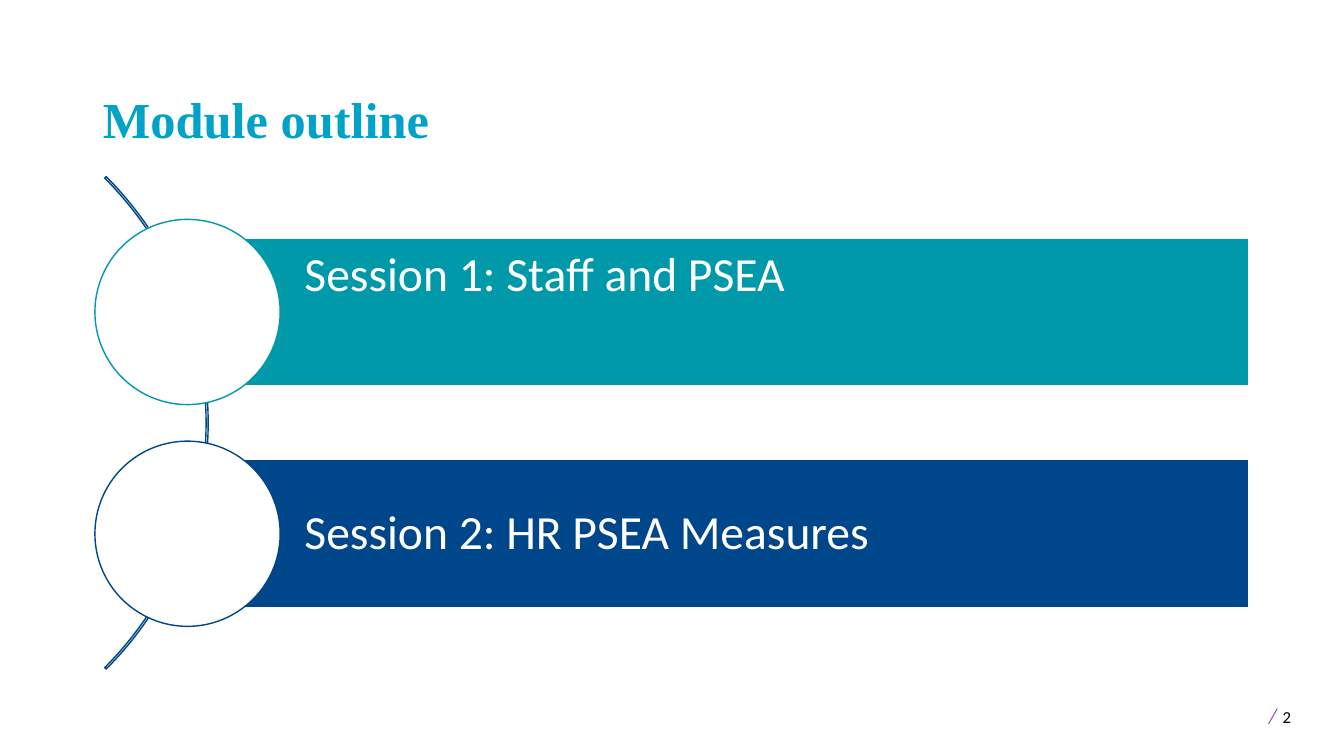
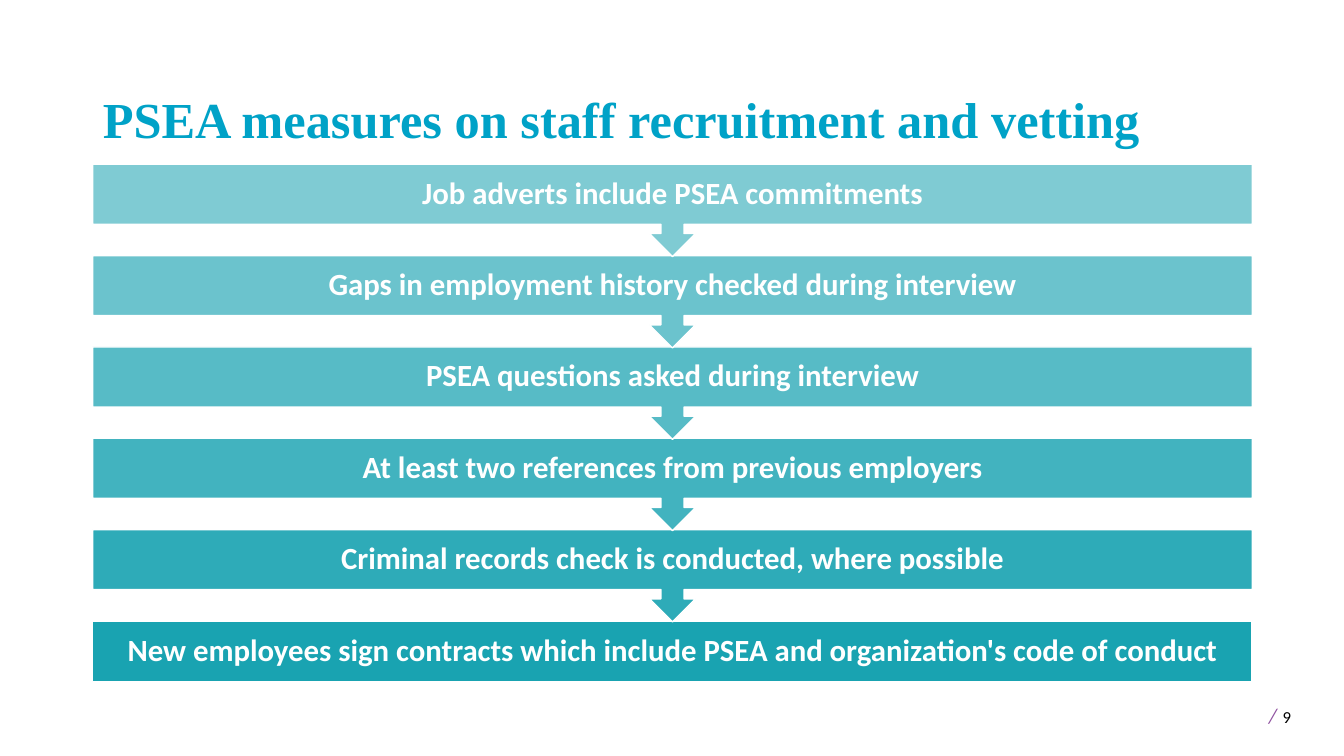
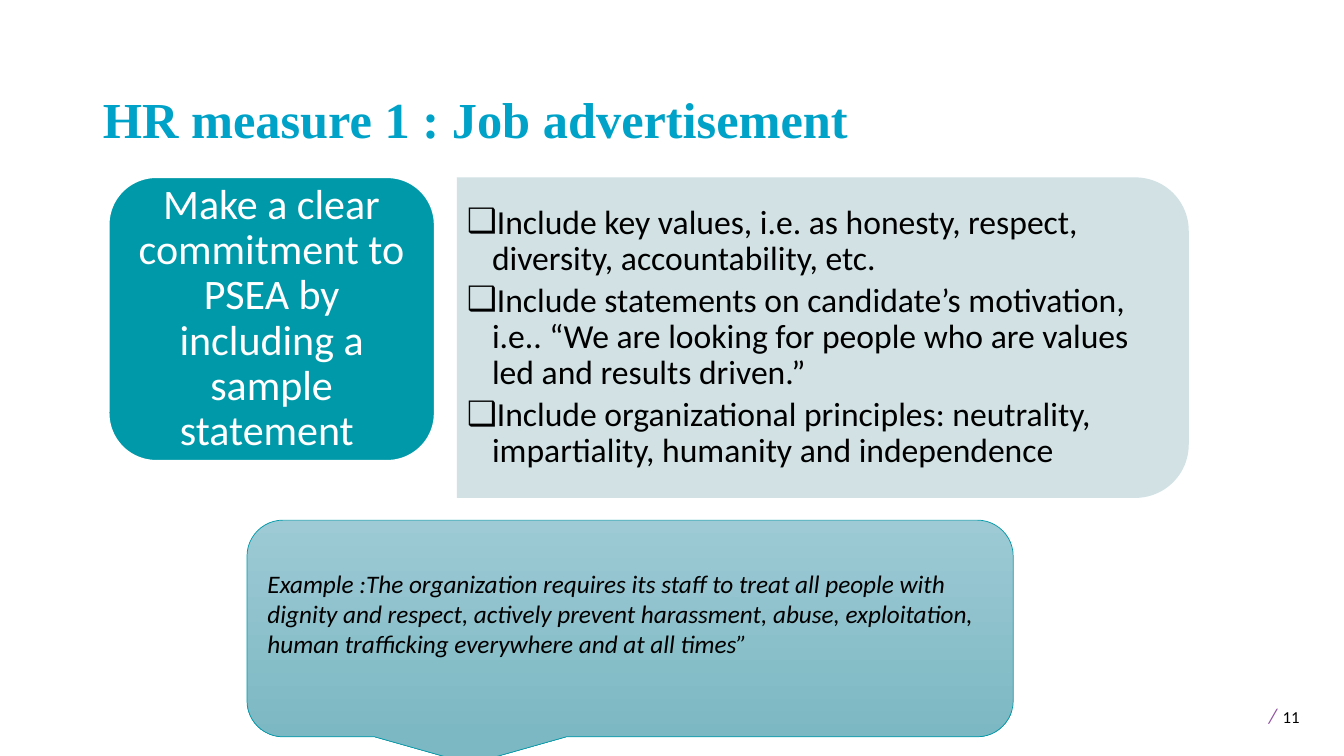
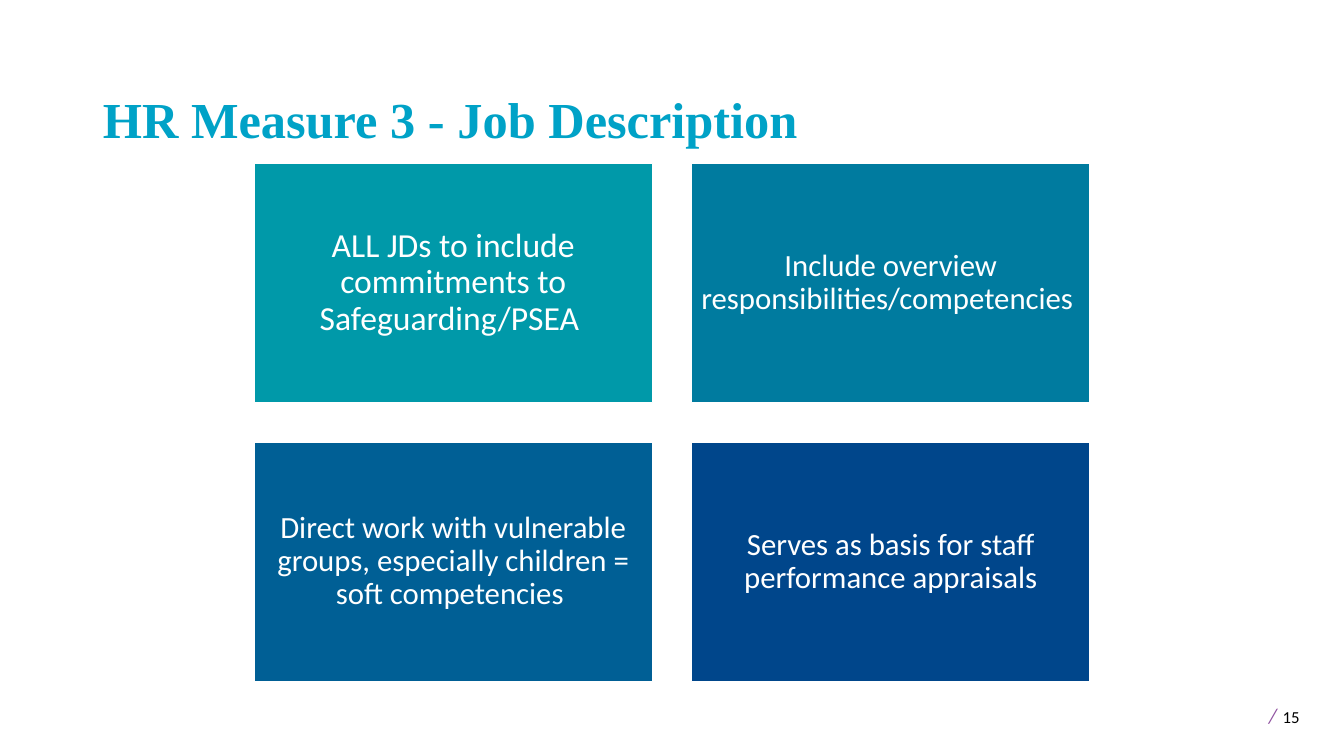
from dataclasses import dataclass

from lxml.etree import SubElement
from pptx import Presentation
from pptx.dml.color import RGBColor
from pptx.enum.shapes import MSO_SHAPE
from pptx.enum.text import MSO_ANCHOR, MSO_AUTO_SIZE, PP_ALIGN
from pptx.oxml.ns import qn
from pptx.util import Inches, Pt

COLORS = {
    "title": "00A2C7",
    "teal": "0099A9",
    "ocean": "007B9F",
    "blue": "005F95",
    "navy": "00468B",
    "panel": "CCDEE2",
    "callout_top": "9DCAD4",
    "callout_bottom": "7CB8C3",
    "slash": "9053A1",
    "white": "FFFFFF",
    "black": "000000",
}
BODY_FONT, TITLE_FONT = "Calibri", "Times New Roman"
TITLE_ONLY, TITLE_AND_CONTENT = 5, 1


@dataclass
class Box:
    """A region of the slide, in inches."""
    left: float
    top: float
    width: float
    height: float

    @property
    def inches(self):
        return [Inches(v) for v in (self.left, self.top, self.width, self.height)]

    @property
    def middle(self):
        return self.top + self.height / 2

    def share(self, x, y, width, height):
        """Return the region given as shares of this one."""
        return Box(self.left + x * self.width, self.top + y * self.height,
                   width * self.width, height * self.height)

    def grid(self, columns, rows, gap):
        """Return the equal cells, row by row."""
        width = (self.width - gap * (columns - 1)) / columns
        height = (self.height - gap * (rows - 1)) / rows
        return [Box(self.left + column * (width + gap), self.top + row * (height + gap),
                    width, height)
                for row in range(rows) for column in range(columns)]


def square(center_x, center_y, side):
    return Box(center_x - side / 2, center_y - side / 2, side, side)


SLIDE = Box(0, 0, 13.33, 7.5)
TITLE = Box(0.92, 0.4, 11.5, 1.13)
PAGE_NUMBER = Box(12.43, 6.88, 0.87, 0.4)
CONTENT = Box(0.92, 1.63, 11.5, 5.13)


def color(name):
    return RGBColor.from_string(COLORS[name])


def style_font(font, size, ink, bold=None, italic=None, name=BODY_FONT):
    font.name, font.size, font.bold, font.italic = name, Pt(size), bold, italic
    font.color.rgb = color(ink)


def set_insets(frame, left, top, right, bottom):
    frame.margin_left, frame.margin_top = Inches(left), Inches(top)
    frame.margin_right, frame.margin_bottom = Inches(right), Inches(bottom)


def add_figure(slide, kind, box, fill=None, line="white", opacity=100, weight=1):
    figure = slide.shapes.add_shape(kind, *box.inches)
    figure.shadow.inherit = False
    if fill:
        figure.fill.solid()
        figure.fill.fore_color.rgb = color(fill)
        if opacity < 100:
            shade = figure.element.spPr.find(qn("a:solidFill"))[0]
            SubElement(shade, qn("a:alpha"), val=str(opacity * 1000))
    else:
        figure.fill.background()
    if line:
        figure.line.color.rgb = color(line)
        figure.line.width = Pt(weight)
    else:
        figure.line.fill.background()
    return figure


def write(figure, text, size, ink="white", align=PP_ALIGN.CENTER, insets=(0.09,) * 4,
          spacing=0.9, bold=None, italic=None):
    frame = figure.text_frame
    frame.word_wrap = True
    frame.vertical_anchor = MSO_ANCHOR.MIDDLE
    set_insets(frame, *insets)
    paragraph = frame.paragraphs[0]
    paragraph.text = text
    paragraph.alignment = align
    paragraph.line_spacing = spacing
    style_font(paragraph.font, size, ink, bold, italic)


def add_page_number(slide, number):
    frame = slide.shapes.add_textbox(*PAGE_NUMBER.inches).text_frame
    frame.word_wrap = True
    paragraph = frame.paragraphs[0]
    for text, size, ink, italic in ((" ", 18, "black", False), ("/", 15, "slash", True),
                                    (" ", 18, "black", False), (number, 12, "black", False)):
        run = paragraph.add_run()
        run.text = str(text)
        style_font(run.font, size, ink, italic=italic)


def add_titled_slide(deck, title, number, layout=TITLE_ONLY):
    slide = deck.slides.add_slide(deck.slide_layouts[layout])
    heading = slide.shapes.title
    heading.left, heading.top, heading.width, heading.height = TITLE.inches
    frame = heading.text_frame
    frame.vertical_anchor = MSO_ANCHOR.BOTTOM
    frame.auto_size = MSO_AUTO_SIZE.NONE
    paragraph = frame.paragraphs[0]
    paragraph.text = title
    paragraph.alignment = PP_ALIGN.LEFT
    paragraph.line_spacing = 0.9
    style_font(paragraph.font, 36, "title", bold=True, name=TITLE_FONT)
    add_page_number(slide, number)
    return slide


def add_sessions(slide, box, sessions):
    """Draw bars headed by circles that hang on one arc."""
    arc = add_figure(slide, MSO_SHAPE.BLOCK_ARC,
                     square(box.left - 3.25, box.middle, 6.91), line="navy")
    for index, value in enumerate((189, 27, 0.003)):
        arc.adjustments[index] = value
    bars = box.grid(1, len(sessions), 0.73)
    for bar, (text, fill, bottom_inset) in zip(bars, sessions):
        session = add_figure(slide, MSO_SHAPE.RECTANGLE, bar, fill)
        write(session, text, 34, align=PP_ALIGN.LEFT, insets=(1.16, 0.09, 0.09, bottom_inset))
        add_figure(slide, MSO_SHAPE.OVAL, square(bar.left, bar.middle, 1.25 * bar.height),
                   "white", line=fill)


def add_steps(slide, box, steps):
    """Stack steps that point down to the next and grow more opaque."""
    last_height = 0.6
    pitch = (box.height - last_height) / (len(steps) - 1)
    for index, text in reversed(list(enumerate(steps))):
        is_last = index == len(steps) - 1
        kind = MSO_SHAPE.RECTANGLE if is_last else MSO_SHAPE.DOWN_ARROW_CALLOUT
        height = last_height if is_last else pitch + 0.01
        step = add_figure(slide, kind,
                          Box(box.left, box.top + index * pitch, box.width, height),
                          "teal", opacity=50 + 8 * index)
        write(step, text, 22, insets=(0.17,) * 4, bold=True)


def add_commitment(slide, box, text):
    commitment = add_figure(slide, MSO_SHAPE.ROUNDED_RECTANGLE, box, "teal")
    write(commitment, text, 30, insets=(0.12, 0.06, 0.12, 0.06))


def add_checklist(slide, box, items):
    """Lay the body placeholder over a panel rounded on its right side."""
    upright = Box(box.left + (box.width - box.height) / 2,
                  box.top + (box.height - box.width) / 2, box.height, box.width)
    panel = add_figure(slide, MSO_SHAPE.ROUND_2_SAME_RECTANGLE, upright, "panel",
                       line=None, opacity=90)
    panel.rotation = 90

    checklist = slide.placeholders[1]
    panel.element.addnext(checklist.element)
    area = box.share(0, 0.05, 0.98, 0.9)
    checklist.left, checklist.top, checklist.width, checklist.height = area.inches
    frame = checklist.text_frame
    frame.auto_size = MSO_AUTO_SIZE.NONE
    frame.vertical_anchor = MSO_ANCHOR.MIDDLE
    frame.text = "\n".join(items)
    for paragraph in frame.paragraphs:
        properties = paragraph._p.get_or_add_pPr()
        properties.set("marL", str(Inches(0.25)))
        properties.set("indent", str(-Inches(0.25)))
        SubElement(properties, qn("a:buChar"), char="❑")
        paragraph.line_spacing = 0.9
        paragraph.space_before = Pt(0)
        paragraph.space_after = Pt(4)
        style_font(paragraph.font, 24, "black")


def add_example(slide, box, text):
    example = add_figure(slide, MSO_SHAPE.ROUNDED_RECTANGULAR_CALLOUT, box,
                         line="teal", weight=0.5)
    example.fill.gradient()
    example.fill.gradient_angle = 270
    for stop, name in zip(example.fill.gradient_stops, ("callout_top", "callout_bottom")):
        stop.color.rgb = color(name)
    write(example, text, 18, "black", PP_ALIGN.LEFT, (0.1, 0.05, 0.1, 0.35),
          spacing=1, italic=True)


def add_cards(slide, box, cards):
    for cell, (text, fill, size) in zip(box.grid(2, 2, 0.39), cards):
        write(add_figure(slide, MSO_SHAPE.RECTANGLE, cell, fill), text, size)


def main():
    deck = Presentation()
    deck.slide_width, deck.slide_height = Inches(SLIDE.width), Inches(SLIDE.height)

    outline = add_titled_slide(deck, "Module outline", 2)
    add_sessions(outline, Box(1.86, 2.36, 10.53, 3.67), [
        ("Session 1: Staff and PSEA", "teal", 0.8),
        ("Session 2: HR PSEA Measures", "navy", 0.09),
    ])

    recruitment = add_titled_slide(deck, "PSEA measures on staff recruitment and vetting", 9)
    add_steps(recruitment, CONTENT, [
        "Job adverts include PSEA commitments",
        "Gaps in employment history checked during interview",
        "PSEA questions asked during interview",
        "At least two references from previous employers",
        "Criminal records check is conducted, where possible",
        "New employees sign contracts which include PSEA and organization's code of conduct",
    ])

    advertisement = add_titled_slide(deck, "HR measure 1 : Job advertisement", 11,
                                     TITLE_AND_CONTENT)
    add_checklist(advertisement, Box(4.53, 1.76, 7.26, 3.18), [
        "Include key values, i.e. as honesty, respect, diversity, accountability, etc.",
        "Include statements on candidate’s motivation, i.e.. “We are looking for people "
        "who are values led and results driven.”",
        "Include organizational principles: neutrality, impartiality, humanity and "
        "independence",
    ])
    add_commitment(advertisement, Box(1.08, 1.76, 3.23, 2.81),
                   "Make a clear commitment to PSEA by including a sample statement ")
    add_example(advertisement, Box(2.45, 5.16, 7.6, 2.15),
                "Example :The organization requires its staff to treat all people with "
                "dignity and respect, actively prevent harassment, abuse, exploitation, "
                "human trafficking everywhere and at all times”")

    description = add_titled_slide(deck, "HR Measure 3 - Job Description", 15)
    add_cards(description, Box(2.52, 1.62, 8.29, 5.14), [
        ("ALL JDs to include commitments to Safeguarding/PSEA ", "teal", 24),
        ("Include overview responsibilities/competencies ", "ocean", 22),
        ("Direct work with vulnerable groups, especially children = soft competencies ",
         "blue", 22),
        ("Serves as basis for staff performance appraisals", "navy", 22),
    ])

    deck.save("out.pptx")


if __name__ == "__main__":
    main()
